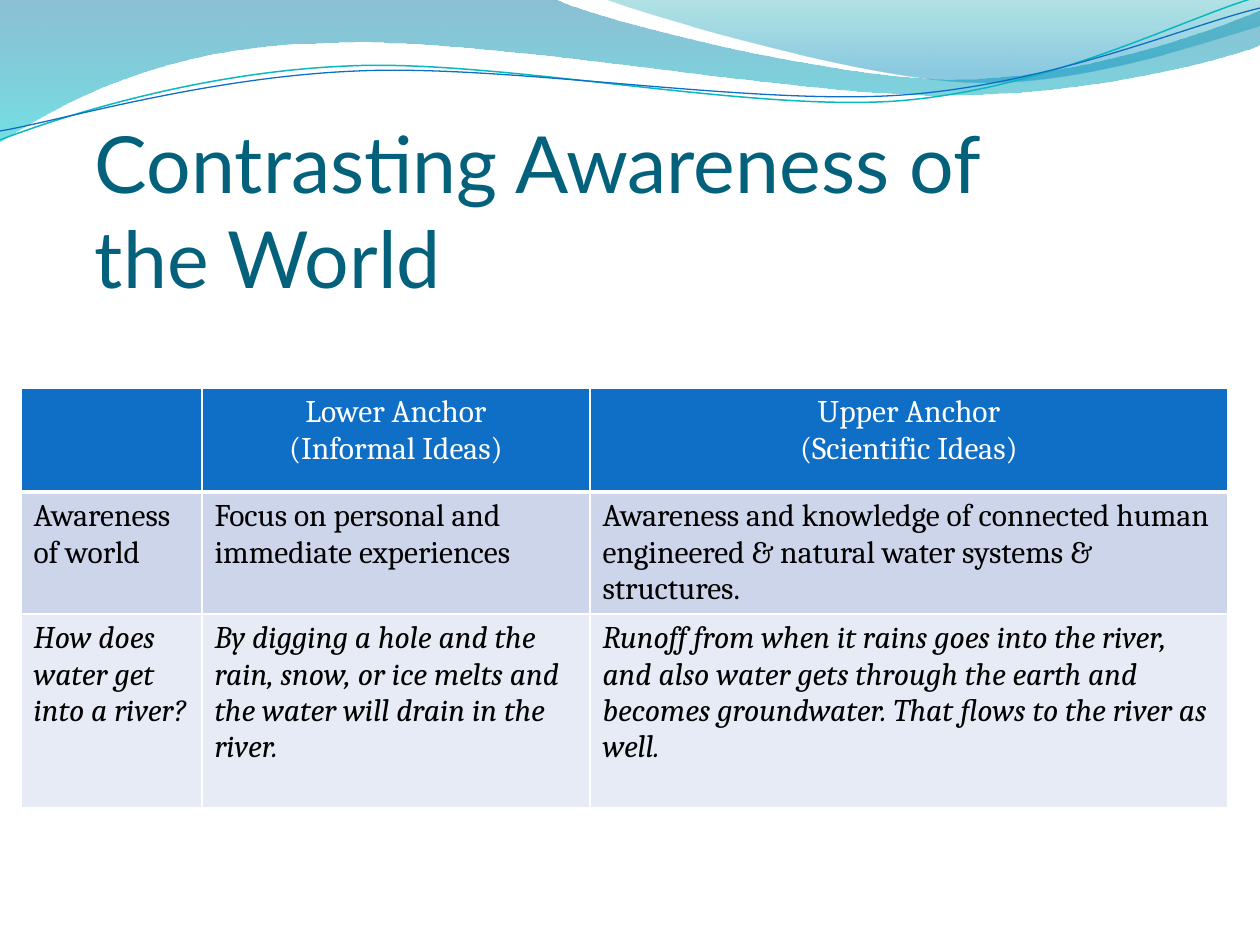
import math
import pptx
import pptx.util
import pptx.dml.color
import pptx.enum.text
import pptx.oxml
import pptx.oxml.ns

PX = 914400 / 126
TILT = 2.7
COLORS = {
    "title": "04617B", "header": "0F6FC6", "odd": "CCD5EA", "even": "E7EBF5",
    "white": "FFFFFF", "black": "000000", "teal": "0AB8BF", "blue": "0F6FC6",
}
TITLE = "Contrasting Awareness of the World"
ROWS = [
    ["", "Lower Anchor\n(Informal Ideas)", "Upper Anchor\n(Scientific Ideas)"],
    ["Awareness of world", "Focus on personal and immediate experiences",
     "Awareness and knowledge of connected human engineered & natural water systems & structures."],
    ["How does water get into a river?",
     "By digging a hole and the rain, snow, or ice melts and the water will drain in the river.",
     "Runoff from when it rains goes into the river, and also water gets through the earth "
     "and becomes groundwater. That flows to the river as well."],
]
ROW_STYLES = [
    dict(fill="header", color="white", align="CENTER", italic=False),
    dict(fill="odd", color="black", align="LEFT", italic=False),
    dict(fill="even", color="black", align="LEFT", italic=True),
]
HEADER_BORDERS = dict(lnL=1, lnR=1, lnT=1, lnB=3)
COL_WIDTHS = [181, 388, 638]
ROW_HEIGHTS = [104, 122, 194]
TABLE_LEFT, TABLE_TOP = 21, 388

BANDS = [
    ([(0, 0), (554, -1),
      ((600, 21), (837, 79), (955, 79)), ((1075, 79), (1207, 33), (1260, 11)), (1261, 45),
      ((1239, 55), (1096, 96), (940, 95)), ((784, 95), (481, 35), (324, 43)),
      ((163, 45), (58, 105), (-1, 142)), (0, 0)],
     [(0, "0074A1", 45), (1, "00C6CF", 55)]),
    ([(604, -1), ((641, 14), (859, 78), (969, 82)),
      ((1079, 87), (1211, 40), (1260, 26)), (1260, 0), (604, -1)],
     [(0, "00A1A9", 30), (0.8, "008BBF", 45)]),
]
WAVES = [
    ([(0, 140), ((60, 117), (199, 72), (349, 66)), ((498, 59), (747, 112), (898, 101)),
      ((1050, 89), (1182, 19), (1257, -3))], (629, 72), "teal", 0.85),
    ([(0, 131), ((59, 121), (207, 77), (357, 71)), ((508, 64), (752, 106), (903, 95)),
      ((1053, 84), (1185, 26), (1260, 8))], (629, 74), "blue", 0.75),
]


def px(n):
    return pptx.util.Emu(round(n * PX))


def rgb(name):
    return pptx.dml.color.RGBColor.from_string(COLORS.get(name, name))


def turn(point, center):
    a = math.radians(TILT)
    dx, dy = point[0] - center[0], point[1] - center[1]
    return (center[0] + dx * math.cos(a) - dy * math.sin(a),
            center[1] + dx * math.sin(a) + dy * math.cos(a))


def add_path(shapes, steps, close, center=None):
    groups = [[step] if len(step) == 2 else list(step) for step in steps]
    points = [turn(pt, center) if center else pt for group in groups for pt in group]
    points = [(px(x), px(y)) for x, y in points]
    builder = shapes.build_freeform(*points[0], scale=1.0)
    builder.add_line_segments(points[1:], close=close)
    sp = builder.convert_to_shape()
    sp.shadow.inherit = False
    lines = iter(list(sp._element.iter(pptx.oxml.ns.qn("a:lnTo"))))
    for group in groups[1:]:
        segment = [next(lines) for _ in group]
        if len(segment) == 3:
            curve = pptx.oxml.parse_xml(f'<a:cubicBezTo {pptx.oxml.ns.nsdecls("a")}/>')
            segment[0].addprevious(curve)
            for line in segment:
                curve.append(line[0])
                line.getparent().remove(line)
    return sp


def add_band(shapes, steps, stops):
    sp = add_path(shapes, steps, True)
    sp.line.fill.background()
    sp.fill.gradient()
    sp.fill.gradient_angle = 270
    for stop, (position, color, _) in zip(sp.fill.gradient_stops, stops):
        stop.position = position
        stop.color.rgb = rgb(color)
    colors = sp._element.spPr.iter(pptx.oxml.ns.qn("a:srgbClr"))
    for clr, (_, _, alpha) in zip(colors, stops):
        clr.append(pptx.oxml.parse_xml(
            f'<a:alpha {pptx.oxml.ns.nsdecls("a")} val="{alpha * 1000}"/>'))


def add_wave(shapes, steps, center, color, width):
    sp = add_path(shapes, steps, False, center)
    sp.rotation = 360 - TILT
    sp.fill.background()
    sp.line.color.rgb = rgb(color)
    sp.line.width = pptx.util.Pt(width)


def write(tf, text, size, font, color, align="LEFT", italic=False):
    tf.word_wrap = True
    for i, line in enumerate(text.split("\n")):
        p = tf.add_paragraph() if i else tf.paragraphs[0]
        p.alignment = getattr(pptx.enum.text.PP_ALIGN, align)
        r = p.add_run()
        r.text = line
        r.font.size = pptx.util.Pt(size)
        r.font.name = font
        r.font.bold = False
        r.font.italic = italic
        r.font.color.rgb = rgb(color)


def set_borders(cell, widths):
    tcPr = cell._tc.get_or_add_tcPr()
    for i, (side, width) in enumerate(widths.items()):
        tcPr.insert(i, pptx.oxml.parse_xml(
            f'<a:{side} {pptx.oxml.ns.nsdecls("a")} w="{width * 12700}"><a:solidFill>'
            f'<a:srgbClr val="{COLORS["white"]}"/></a:solidFill></a:{side}>'))


def add_title(s):
    sp = s.shapes.add_textbox(px(95), px(178), px(922), px(126))
    tf = sp.text_frame
    tf.auto_size = pptx.enum.text.MSO_AUTO_SIZE.NONE
    tf.vertical_anchor = pptx.enum.text.MSO_ANCHOR.BOTTOM
    tf.margin_left = tf.margin_right = tf.margin_bottom = 0
    tf.margin_top = px(6)
    write(tf, TITLE, size=45, font="Lato", color="title")


def add_anchor_table(s):
    table = s.shapes.add_table(
        len(ROWS), len(COL_WIDTHS), px(TABLE_LEFT), px(TABLE_TOP),
        px(sum(COL_WIDTHS)), px(sum(ROW_HEIGHTS))).table
    for col, width in zip(table.columns, COL_WIDTHS):
        col.width = px(width)
    for row, height, texts, style in zip(table.rows, ROW_HEIGHTS, ROWS, ROW_STYLES):
        row.height = px(height)
        for cell, text in zip(row.cells, texts):
            cell.fill.solid()
            cell.fill.fore_color.rgb = rgb(style["fill"])
            if text:
                write(cell.text_frame, text, size=18, font="Cambria", color=style["color"],
                      align=style["align"], italic=style["italic"])
    for cell in table.rows[0].cells:
        set_borders(cell, HEADER_BORDERS)


def main():
    prs = pptx.Presentation()
    prs.slide_width, prs.slide_height = px(1260), px(945)
    s = prs.slides.add_slide(prs.slide_layouts[6])
    for band in BANDS:
        add_band(s.shapes, *band)
    waves = s.shapes.add_group_shape()
    for wave in WAVES:
        add_wave(waves.shapes, *wave)
    add_title(s)
    add_anchor_table(s)
    prs.save("out.pptx")


if __name__ == "__main__":
    main()
